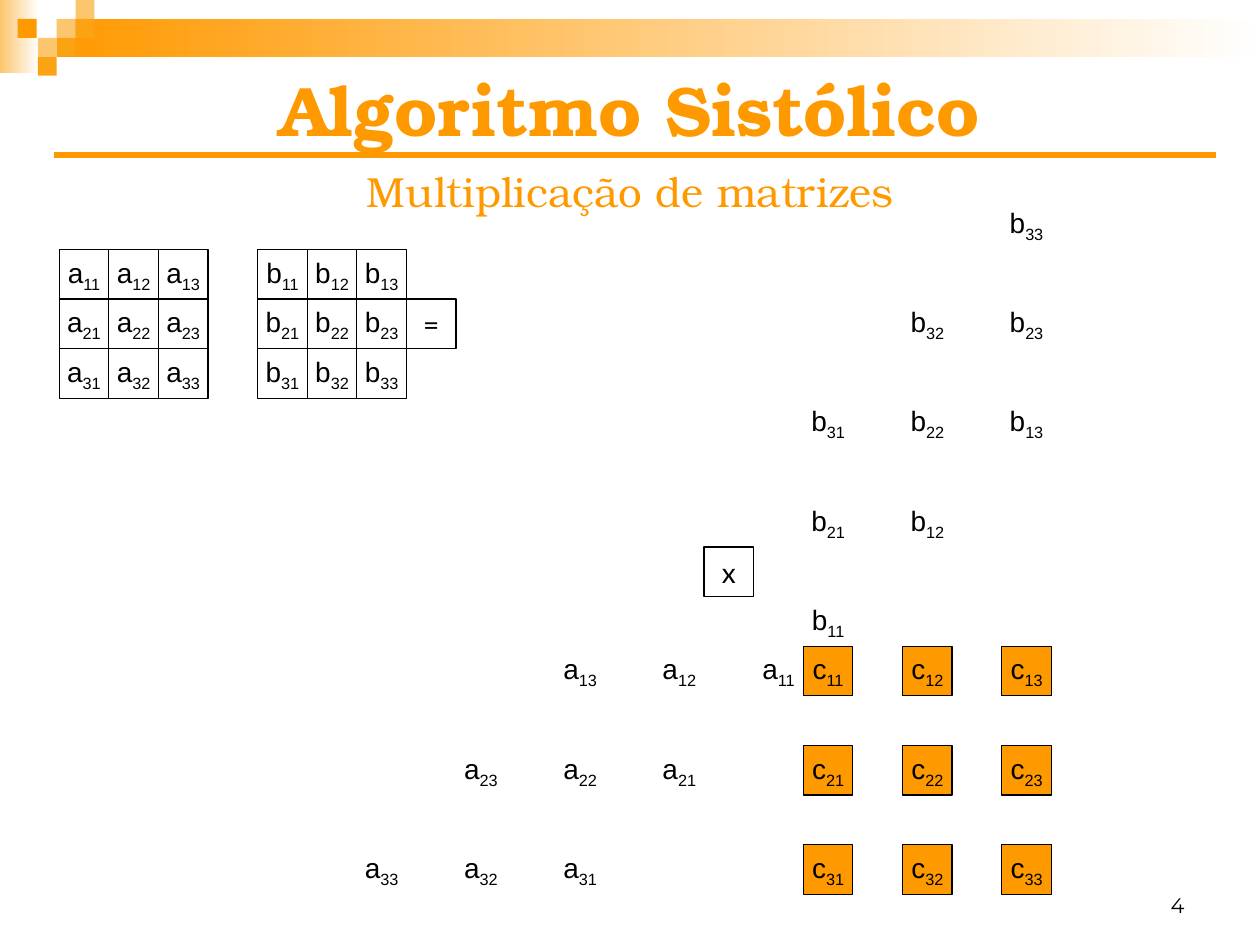
"""Builds the slide on systolic matrix multiplication."""
import itertools

import pptx
import pptx.dml.color
import pptx.enum.shapes
import pptx.enum.text
import pptx.oxml.ns
import pptx.util
from lxml import etree

Inches = pptx.util.Inches
Pt = pptx.util.Pt
ALIGN = pptx.enum.text.PP_ALIGN
ANCHOR = pptx.enum.text.MSO_ANCHOR
RECTANGLE = pptx.enum.shapes.MSO_SHAPE.RECTANGLE

ORANGE, AMBER, PALE = "FF9900", "FBA313", "FCC66E"
BLACK, WHITE = "000000", "FFFFFF"
CELL = 1 / 2.54
GRID_LEFT, GRID_TOP = 0.47, 1.98
INDICES = list(itertools.product(range(3), repeat=2))
TILE = 0.15
TILES = [
    (0.45, 0.15, PALE), (0.6, 0, PALE), (0.6, 0.15, AMBER), (0.3, 0.3, PALE),
    (0.14, 0.15, ORANGE), (0.45, 0.3, AMBER), (0.3, 0.45, AMBER),
]


def color(value):
    return pptx.dml.color.RGBColor.from_string(value)


def set_fill(shape, value):
    if value:
        shape.fill.solid()
        shape.fill.fore_color.rgb = color(value)
    else:
        shape.fill.background()


def add_rectangle(slide, left, top, width, height, fill=None, outline=None):
    shape = slide.shapes.add_shape(
        RECTANGLE, Inches(left), Inches(top), Inches(width), Inches(height))
    shape.shadow.inherit = False
    set_fill(shape, fill)
    if outline:
        shape.line.color.rgb = color(outline)
        shape.line.width = Pt(0.75)
    else:
        shape.line.fill.background()
    return shape


def add_gradient(slide, left, top, width, height, start):
    fill = add_rectangle(slide, left, top, width, height, start).fill
    fill.gradient()
    fill.gradient_angle = 0
    for stop, value in zip(fill.gradient_stops, (start, WHITE)):
        stop.color.rgb = color(value)


def style_paragraph(paragraph, font, size, value, alignment=ALIGN.CENTER, bold=False):
    paragraph.alignment = alignment
    paragraph.font.name = font
    paragraph.font.size = Pt(size)
    paragraph.font.color.rgb = color(value)
    paragraph.font.bold = bold


def add_text(slide, text, left, top, width, height, font, size, value,
             alignment=ALIGN.CENTER, anchor=ANCHOR.MIDDLE, bold=False):
    box = slide.shapes.add_textbox(
        Inches(left), Inches(top), Inches(width), Inches(height))
    frame = box.text_frame
    frame.word_wrap = True
    frame.vertical_anchor = anchor
    frame.text = text
    style_paragraph(frame.paragraphs[0], font, size, value, alignment, bold)


def add_rule(slide, left, right, top):
    line = slide.shapes.add_connector(
        pptx.enum.shapes.MSO_CONNECTOR.STRAIGHT,
        Inches(left), Inches(top), Inches(right), Inches(top))
    line.line.color.rgb = color(ORANGE)
    line.line.width = Pt(3)
    properties = line._element.spPr
    etree.SubElement(properties, pptx.oxml.ns.qn("a:effectLst"))


def add_cell(slide, row, column, text, subscript="", font="Arial",
             fill=None, outline=BLACK):
    left, top = GRID_LEFT + column * CELL, GRID_TOP + row * CELL
    if outline:
        shape = add_rectangle(slide, left, top, CELL, CELL, fill, outline)
    else:
        shape = slide.shapes.add_textbox(
            Inches(left), Inches(top), Inches(CELL), Inches(CELL))
    frame = shape.text_frame
    frame.word_wrap = not outline
    frame.margin_left = frame.margin_right = 0
    frame.vertical_anchor = ANCHOR.MIDDLE
    paragraph = frame.paragraphs[0]
    style_paragraph(paragraph, font, 16, BLACK)
    paragraph.add_run().text = text
    if subscript:
        run = paragraph.add_run()
        run.text = subscript
        run._r.get_or_add_rPr().set("baseline", "-25000")


def add_matrix(slide, letter, place, **style):
    for i, j in INDICES:
        row, column = place(i, j)
        add_cell(slide, row, column, letter, f"{i + 1}{j + 1}", **style)


def add_banner(slide):
    add_gradient(slide, 0, 0, 0.31, 0.58, PALE)
    add_gradient(slide, 0.45, 0.15, 9.55, 0.3, ORANGE)
    for left, top, fill in TILES:
        add_rectangle(slide, left, top, TILE, TILE, fill)


def main():
    presentation = pptx.Presentation()
    presentation.slide_width = Inches(10)
    presentation.slide_height = Inches(7.5)
    slide = presentation.slides.add_slide(presentation.slide_layouts[6])

    add_banner(slide)
    add_text(slide, "4", 7.17, 6.83, 2.33, 0.5, "Montserrat", 12, BLACK,
             ALIGN.RIGHT, ANCHOR.BOTTOM)
    add_text(slide, "Algoritmo Sistólico", 0.5, 0.5, 9, 0.73,
             "TeX Gyre Bonum", 40, ORANGE, bold=True)
    add_rule(slide, 0.43, 9.65, 1.23)
    add_text(slide, "Multiplicação de matrizes", 0.5, 1.39, 9, 0.24,
             "TeX Gyre Bonum", 24, ORANGE)

    add_matrix(slide, "a", lambda i, j: (i, j))
    add_matrix(slide, "b", lambda i, j: (i, 4 + j))
    add_cell(slide, 6, 13, "x", font="Lato")
    add_cell(slide, 1, 7, "=", font="Lato")
    add_matrix(slide, "a", lambda i, j: (8 + 2 * i, 14 - 2 * (i + j)), outline=None)
    add_matrix(slide, "b", lambda i, j: (7 - 2 * (i + j), 15 + 2 * j), outline=None)
    add_matrix(slide, "c", lambda i, j: (8 + 2 * i, 15 + 2 * j), fill=ORANGE)

    presentation.save("out.pptx")


if __name__ == "__main__":
    main()
